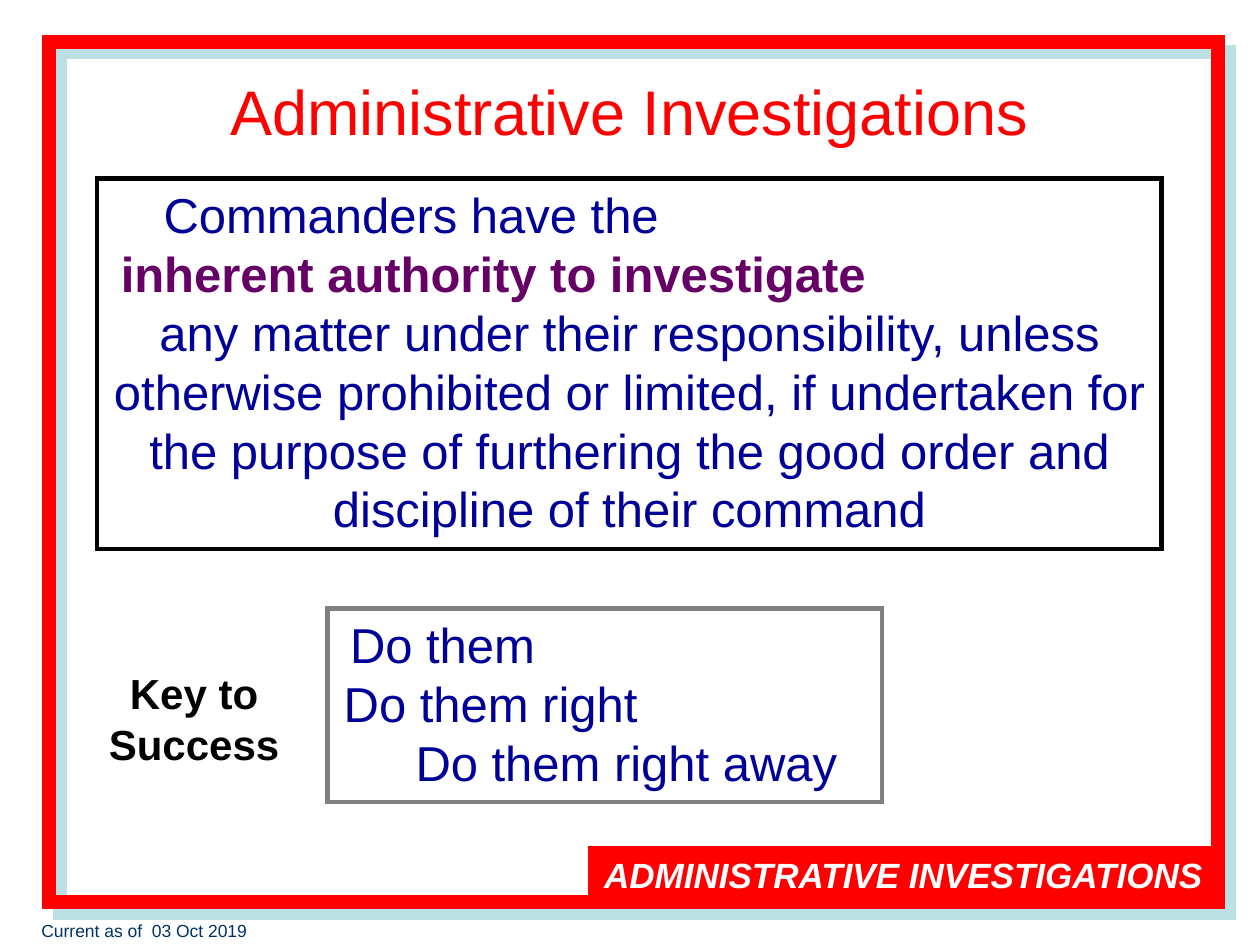
"""Builds the Administrative Investigations slide."""
from dataclasses import dataclass

from pptx import Presentation
from pptx.dml.color import RGBColor
from pptx.enum.shapes import MSO_SHAPE
from pptx.enum.text import MSO_ANCHOR, PP_ALIGN
from pptx.oxml import parse_xml
from pptx.oxml.ns import nsdecls, qn
from pptx.util import Inches, Pt

WIDTH, HEIGHT = 10, 7.5
COLORS = {
    "red": "FF0000", "shade": "BBE0E3", "white": "FFFFFF", "slate": "003366",
    "black": "000000", "navy": "000099", "plum": "660066", "gray": "808080",
}


@dataclass(frozen=True)
class Area:
    """Left, top, width and height as shares of the slide."""
    left: float
    top: float
    width: float
    height: float

    def lengths(self) -> tuple:
        return (Inches(self.left * WIDTH), Inches(self.top * HEIGHT),
                Inches(self.width * WIDTH), Inches(self.height * HEIGHT))


@dataclass(frozen=True)
class Line:
    """A paragraph; an indent in inches makes it left-aligned."""
    text: str
    indent: float | None = None
    color: str | None = None
    bold: bool | None = None


def color(name: str) -> RGBColor:
    return RGBColor.from_string(COLORS[name])


def add_panel(slide, area: Area, line: str, weight: float, fill: str | None = None):
    panel = slide.shapes.add_shape(MSO_SHAPE.RECTANGLE, *area.lengths())
    panel.shadow.inherit = False
    if fill:
        panel.fill.solid()
        panel.fill.fore_color.rgb = color(fill)
    else:
        panel.fill.background()
    panel.line.color.rgb = color(line)
    panel.line.width = Pt(weight)
    panel._element.spPr.find(qn("a:ln")).append(
        parse_xml(f'<a:miter {nsdecls("a")} lim="800000"/>'))
    return panel


def add_label(slide, area: Area):
    return slide.shapes.add_textbox(*area.lengths())


def write(holder, lines: list[Line], *, size: float, ink: str, bold: bool = False,
          italic: bool = False, align=PP_ALIGN.CENTER, anchor=MSO_ANCHOR.TOP) -> None:
    frame = holder.text_frame
    frame.word_wrap = True
    frame.vertical_anchor = anchor
    for index, line in enumerate(lines):
        paragraph = frame.add_paragraph() if index else frame.paragraphs[0]
        paragraph.alignment = align
        if line.indent is not None:
            paragraph.alignment = PP_ALIGN.LEFT
            paragraph._p.get_or_add_pPr().set("marL", str(Inches(line.indent)))
        run = paragraph.add_run()
        run.text = line.text
        run.font.name = "Arial"
        run.font.size = Pt(size)
        run.font.bold = bold if line.bold is None else line.bold
        run.font.italic = italic
        run.font.color.rgb = color(line.color or ink)


def add_frame(slide) -> None:
    border = add_panel(slide, Area(0.039, 0.044, 0.928, 0.911), "red", 8)
    border._element.spPr.find(qn("a:effectLst")).append(parse_xml(
        f'<a:outerShdw {nsdecls("a")} dist="{Pt(8.5)}" dir="2700000" algn="ctr" '
        f'rotWithShape="0"><a:srgbClr val="{COLORS["shade"]}"/></a:outerShdw>'))
    banner = add_panel(slide, Area(0.467, 0.896, 0.5, 0.059), "red", 0.75, "red")
    write(banner, [Line("ADMINISTRATIVE INVESTIGATIONS")], size=20, ink="white",
          bold=True, italic=True, anchor=MSO_ANCHOR.MIDDLE)
    write(add_label(slide, Area(0.023, 0.967, 0.218, 0.036)),
          [Line("Current as of  03 Oct 2019")], size=10, ink="slate",
          align=PP_ALIGN.LEFT)


def add_content(slide) -> None:
    authority = add_panel(slide, Area(0.077, 0.189, 0.845, 0.392), "black", 2.5)
    write(authority, [
        Line("Commanders have the", 0.43),
        Line("inherent authority to investigate", 0.09, "plum", True),
        Line("any matter under their responsibility, unless otherwise prohibited "
             "or limited, if undertaken for the purpose of furthering the good "
             "order and discipline of their command"),
    ], size=28, ink="navy")
    write(add_label(slide, Area(0.108, 0.033, 0.783, 0.167)),
          [Line("Administrative Investigations")], size=36, ink="red",
          anchor=MSO_ANCHOR.MIDDLE)
    steps = add_panel(slide, Area(0.26, 0.644, 0.44, 0.205), "gray", 2.5)
    write(steps, [
        Line("Do them", 0.08),
        Line("Do them right", 0.03),
        Line("Do them right away", 0.6),
    ], size=28, ink="navy")
    write(add_label(slide, Area(0.058, 0.7, 0.192, 0.12)),
          [Line("Key to Success")], size=24, ink="black", bold=True)


def main() -> None:
    deck = Presentation()
    deck.slide_width, deck.slide_height = Inches(WIDTH), Inches(HEIGHT)
    slide = deck.slides.add_slide(deck.slide_layouts[6])
    add_frame(slide)
    add_content(slide)
    deck.save("out.pptx")


if __name__ == "__main__":
    main()
